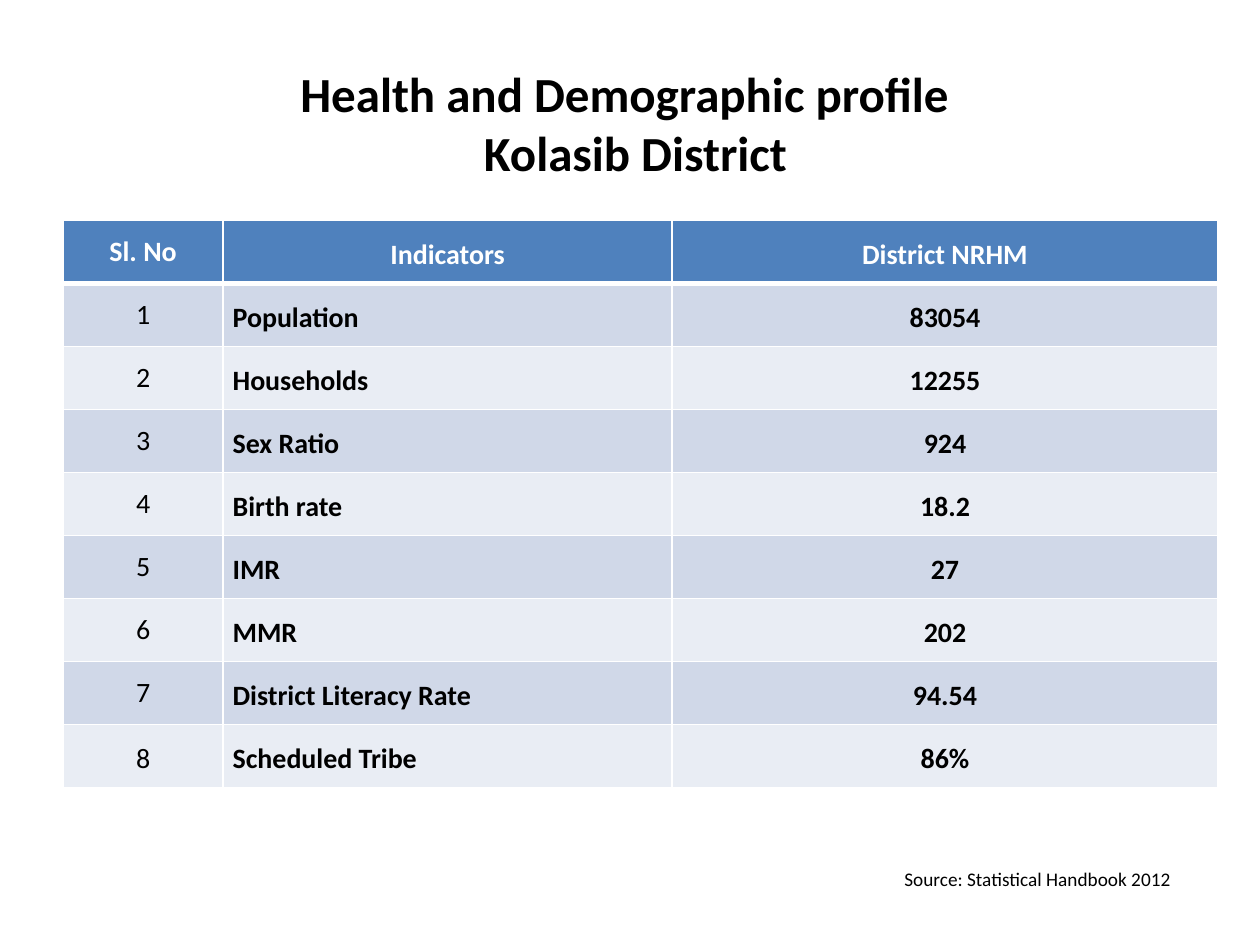
from dataclasses import dataclass

from lxml import etree
from pptx import Presentation
from pptx import util as u
from pptx.dml.color import RGBColor
from pptx.enum import text
from pptx.oxml import ns

CENTER, LEFT = text.PP_ALIGN.CENTER, text.PP_ALIGN.LEFT
INDICATORS = [
    ("Population", "83054"),
    ("Households", "12255"),
    ("Sex Ratio", "924"),
    ("Birth rate", "18.2"),
    ("IMR", "27"),
    ("MMR", "202"),
    ("District Literacy Rate", "94.54"),
    ("Scheduled Tribe", "86%"),
]


@dataclass(frozen=True)
class Theme:
    font: str = "Calibri"
    ink: str = "000000"
    white: str = "FFFFFF"
    header: str = "4F81BD"
    bands: tuple = ("D0D8E8", "E9EDF4")
    title_size: int = 28
    table_size: int = 16
    source_size: int = 11
    rule: int = 1
    header_rule: int = 3


class SlideBuilder:
    def __init__(self, page, theme):
        self.page = page
        self.theme = theme

    def add_words(self, para, words, size, color, bold=False):
        for index, line in enumerate(words.split("\n")):
            if index:
                para.add_line_break()
            span = para.add_run()
            span.text = line
            span.font.name = self.theme.font
            span.font.size = u.Pt(size)
            span.font.bold = bold
            span.font.color.rgb = RGBColor.from_string(color)

    def text_box(self, place, words, size, bold=False, align=LEFT, wrap=True):
        box = self.page.shapes.add_textbox(*map(u.Cm, place))
        frame = box.text_frame
        frame.word_wrap = wrap
        frame.vertical_anchor = text.MSO_ANCHOR.MIDDLE
        para = frame.paragraphs[0]
        para.alignment = align
        self.add_words(para, words, size, self.theme.ink, bold)

    def borders(self, cell, top, bottom):
        properties = cell._tc.get_or_add_tcPr()
        rule = self.theme.rule
        for side, width in zip("LRTB", (rule, rule, top, bottom)):
            line = etree.SubElement(properties, ns.qn(f"a:ln{side}"), w=str(u.Pt(width)))
            fill = etree.SubElement(line, ns.qn("a:solidFill"))
            etree.SubElement(fill, ns.qn("a:srgbClr"), val=self.theme.white)

    def cell(self, cell, words, row, column, compact):
        theme = self.theme
        is_header = row == 0
        self.borders(
            cell,
            theme.header_rule if row == 1 else theme.rule,
            theme.header_rule if is_header else theme.rule,
        )
        cell.fill.solid()
        fill = theme.header if is_header else theme.bands[(row - 1) % 2]
        cell.fill.fore_color.rgb = RGBColor.from_string(fill)
        cell.vertical_anchor = text.MSO_ANCHOR.MIDDLE
        para = cell.text_frame.paragraphs[0]
        para.alignment = LEFT if column == 1 and not is_header else CENTER
        if compact:
            cell.margin_left = cell.margin_right = u.Cm(0.19)
            cell.margin_top = cell.margin_bottom = 0
            para.line_spacing = 1.15
        color = theme.white if is_header else theme.ink
        self.add_words(para, words, theme.table_size, color, is_header or column > 0)

    def table(self, left, top, widths, row_height, rows):
        table = self.page.shapes.add_table(
            len(rows), len(widths), u.Cm(left), u.Cm(top),
            u.Cm(sum(widths)), u.Cm(row_height * len(rows)),
        ).table
        for column, width in zip(table.columns, widths):
            column.width = u.Cm(width)
        last = len(rows) - 1
        for row, values in enumerate(rows):
            table.rows[row].height = u.Cm(row_height)
            for column, words in enumerate(values):
                compact = column > 0 or row == last
                self.cell(table.cell(row, column), words, row, column, compact)


def main():
    deck = Presentation()
    deck.slide_width, deck.slide_height = u.Cm(25.4), u.Cm(19.05)
    theme = Theme()
    builder = SlideBuilder(deck.slides.add_slide(deck.slide_layouts[6]), theme)

    builder.text_box(
        (1.27, 1.27, 22.86, 2.39),
        "Health and Demographic profile \n Kolasib District",
        theme.title_size, bold=True, align=CENTER,
    )
    rows = [("Sl. No", "Indicators", "District NRHM")]
    rows += [(str(number), *pair) for number, pair in enumerate(INDICATORS, 1)]
    builder.table(1.27, 4.45, (3.23, 9.05, 11), 1.27, rows)
    builder.text_box(
        (17.98, 17.35, 5.94, 0.74),
        "Source: Statistical Handbook 2012", theme.source_size, wrap=False,
    )
    deck.save("out.pptx")


if __name__ == "__main__":
    main()
